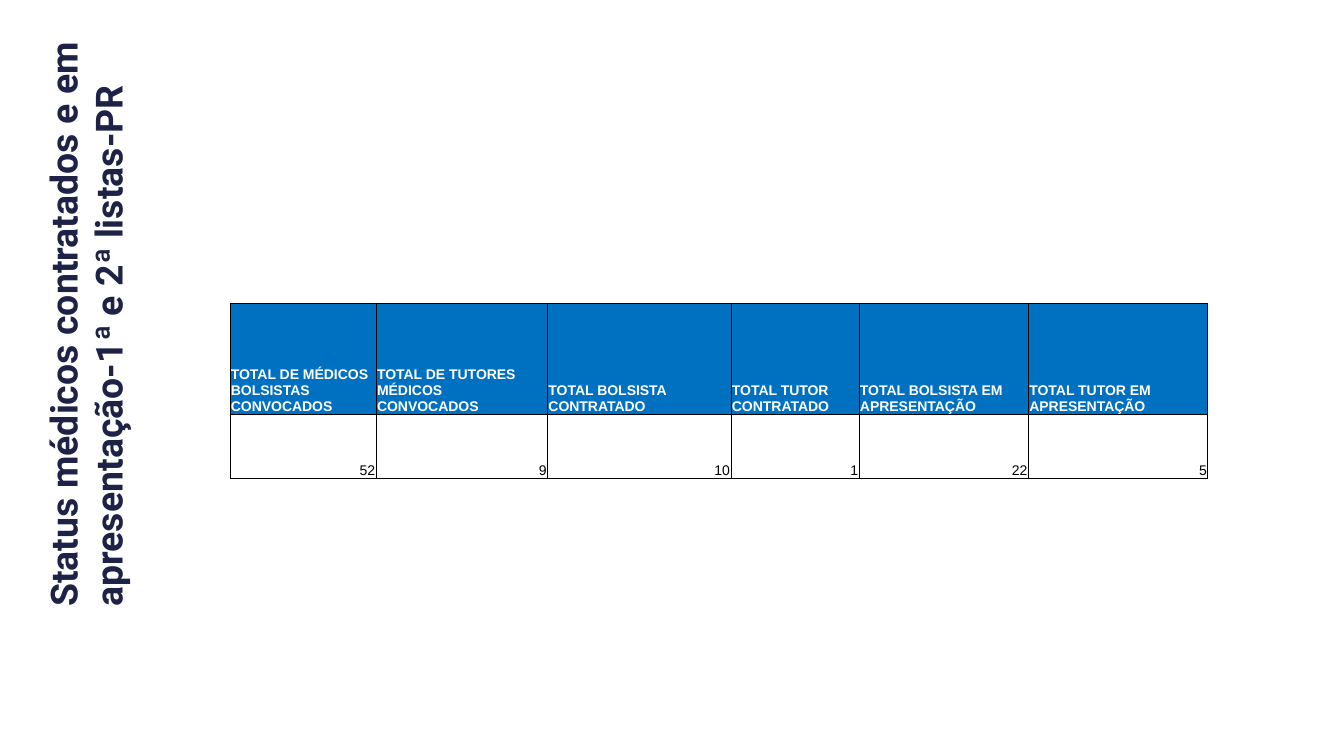
import dataclasses

import pptx
import pptx.dml.color
import pptx.enum.text
import pptx.oxml
import pptx.oxml.ns
import pptx.util
from pptx.util import Inches

ALIGN = pptx.enum.text.PP_ALIGN
ANCHOR = pptx.enum.text.MSO_ANCHOR


@dataclasses.dataclass(frozen=True)
class Theme:
    navy: str = "1F2247"
    blue: str = "0070C0"
    white: str = "FFFFFF"
    black: str = "000000"
    head_font: str = "Roboto"
    body_font: str = "Arial"
    head_size: float = 26.7
    body_size: float = 10
    rule: float = 0.5


class Deck:
    def __init__(self, theme):
        self.theme = theme
        self.show = pptx.Presentation()
        self.show.slide_width = Inches(13.33)
        self.show.slide_height = Inches(7.5)
        self.slide = self.show.slides.add_slide(self.show.slide_layouts[5])

    def style(self, para, name, size, color, bold, align=ALIGN.LEFT):
        para.alignment = align
        font = para.font
        font.name, font.size, font.bold = name, pptx.util.Pt(size), bold
        font.color.rgb = pptx.dml.color.RGBColor.from_string(color)

    def title(self, text, left, top, width, height, turn):
        box = self.slide.shapes.title
        box.left, box.top = Inches(left), Inches(top)
        box.width, box.height = Inches(width), Inches(height)
        box.rotation = turn
        frame = box.text_frame
        frame.text = text
        frame.word_wrap = True
        frame.auto_size = pptx.enum.text.MSO_AUTO_SIZE.NONE
        frame.vertical_anchor = ANCHOR.TOP
        frame.margin_left = frame.margin_right = Inches(0.13)
        frame.margin_top = frame.margin_bottom = Inches(0.13)
        look = self.theme
        self.style(frame.paragraphs[0], look.head_font, look.head_size,
                   look.navy, True)

    def border(self, cell):
        props = cell._tc.get_or_add_tcPr()
        space = pptx.oxml.ns.nsdecls("a")
        width = pptx.util.Pt(self.theme.rule)
        for side in ("lnL", "lnR", "lnT", "lnB"):
            props.append(pptx.oxml.parse_xml(
                f'<a:{side} {space} w="{width}"><a:solidFill>'
                f'<a:srgbClr val="{self.theme.black}"/>'
                f'</a:solidFill></a:{side}>'))

    def cell(self, cell, text, head):
        look = self.theme
        cell.text = text
        cell.vertical_anchor = ANCHOR.BOTTOM
        cell.margin_left = cell.margin_right = Inches(0.01)
        cell.margin_top, cell.margin_bottom = Inches(0.01), 0
        self.border(cell)
        if head:
            cell.fill.solid()
            cell.fill.fore_color.rgb = (
                pptx.dml.color.RGBColor.from_string(look.blue))
        else:
            cell.fill.background()
        self.style(cell.text_frame.paragraphs[0], look.body_font,
                   look.body_size, look.white if head else look.black,
                   head, ALIGN.LEFT if head else ALIGN.RIGHT)

    def table(self, rows, left, top, widths, heights):
        grid = self.slide.shapes.add_table(
            len(rows), len(widths), Inches(left), Inches(top),
            Inches(sum(widths)), Inches(sum(heights))).table
        grid.horz_banding = False
        for col, width in zip(grid.columns, widths):
            col.width = Inches(width)
        for i, (row, height) in enumerate(zip(rows, heights)):
            grid.rows[i].height = Inches(height)
            for j, text in enumerate(row):
                self.cell(grid.cell(i, j), text, i == 0)


def main():
    deck = Deck(Theme())
    deck.title("Status médicos contratados e em apresentação-1ª e 2ª listas-PR",
               -2.1, 2.61, 5.91, 1.17, 270)
    totals = {
        "TOTAL DE MÉDICOS BOLSISTAS CONVOCADOS": "52",
        "TOTAL DE TUTORES MÉDICOS CONVOCADOS": "9",
        "TOTAL BOLSISTA CONTRATADO": "10",
        "TOTAL TUTOR CONTRATADO": "1",
        "TOTAL BOLSISTA EM APRESENTAÇÃO": "22",
        "TOTAL TUTOR EM APRESENTAÇÃO": "5",
    }
    deck.table([list(totals), list(totals.values())], 2.28, 3.01,
               [1.45, 1.7, 1.82, 1.27, 1.68, 1.78], [1.1, 0.64])
    deck.show.save("out.pptx")


if __name__ == "__main__":
    main()
